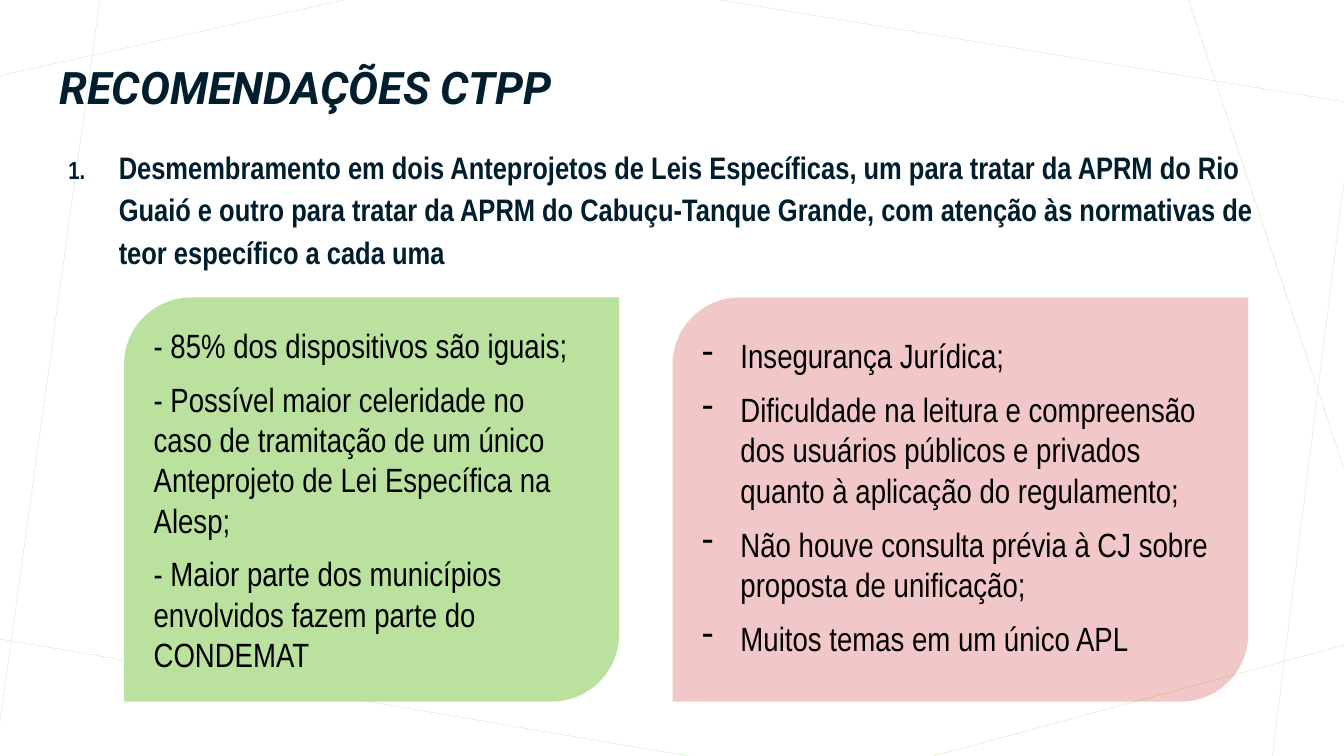
from lxml import etree
from pptx import Presentation
from pptx import util as u
from pptx.dml.color import RGBColor
from pptx.enum import shapes, text
from pptx.oxml.ns import qn

PX = u.Inches(1) // 100
NAVY, GREEN, RED, BLACK = "001E2E", "BAE19E", "C00000", "000000"
BODY, HEAD = "Arial Narrow", "Roboto"


def color(code):
    return RGBColor.from_string(code)


def fade(fill, pct):
    """Make a solid fill partly transparent; pct is its opacity."""
    tone = fill._xPr.find(qn("a:solidFill"))[0]
    etree.SubElement(tone, qn("a:alpha"), val=str(pct * 1000))


def bullet(para, indent, tag, **attrs):
    """Hang a bullet or number in front of the paragraph."""
    props = para._p.get_or_add_pPr()
    props.set("marL", str(indent * PX))
    props.set("indent", str(-indent * PX))
    if tag == "a:buAutoNum":
        etree.SubElement(props, qn("a:buSzPct"), val="80000")
    etree.SubElement(props, qn(tag), **attrs)


class Deck:
    def __init__(self, wide, high):
        self.prs = Presentation()
        self.prs.slide_width = wide * PX
        self.prs.slide_height = high * PX
        self.slide = self.prs.slides.add_slide(self.prs.slide_layouts[5])
        self.items = self.slide.shapes

    def label(self, frame, lines, size, tone, font=BODY, bold=False,
              italic=False, gap=0, pitch=None):
        frame.word_wrap = True
        frame.text = "\n".join(lines)
        for i, para in enumerate(frame.paragraphs):
            para.alignment = text.PP_ALIGN.LEFT
            if pitch:
                para.line_spacing = pitch
            if i and gap:
                para.space_before = u.Pt(gap)
            for run in para.runs:
                run.font.size = u.Pt(size)
                run.font.name = font
                run.font.bold = bold
                run.font.italic = italic
                run.font.color.rgb = color(tone)
        return frame.paragraphs

    def title(self, box, words):
        head = self.items.title
        head.left, head.top, head.width, head.height = (n * PX for n in box)
        head.text_frame.vertical_anchor = text.MSO_ANCHOR.MIDDLE
        self.label(head.text_frame, [words], 32, NAVY, HEAD, True, True, pitch=0.9)

    def line(self, *ends):
        link = self.items.add_connector(
            shapes.MSO_CONNECTOR.STRAIGHT, *(n * PX for n in ends))
        link.line.color.rgb = color(GREEN)
        link.line.width = u.Pt(0.25)
        fade(link.line.fill, 70)
        etree.SubElement(link._element.spPr, qn("a:effectLst"))

    def point(self, box, words):
        """Add the numbered recommendation."""
        area = self.items.add_textbox(*(n * PX for n in box))
        for para in self.label(area.text_frame, [words], 22.2, NAVY,
                               bold=True, pitch=1.14):
            bullet(para, 50, "a:buAutoNum", type="arabicPeriod")

    def card(self, box, lines, fill, opacity=100, dashes=False):
        form = self.items.add_shape(
            shapes.MSO_SHAPE.ROUND_2_DIAG_RECTANGLE, *(n * PX for n in box))
        form.shadow.inherit = False
        form.fill.solid()
        form.fill.fore_color.rgb = color(fill)
        if opacity < 100:
            fade(form.fill, opacity)
        form.line.fill.background()
        frame = form.text_frame
        frame.vertical_anchor = text.MSO_ANCHOR.MIDDLE
        paras = self.label(frame, lines, 24, BLACK, gap=9.6)
        if dashes:
            frame.vertical_anchor = text.MSO_ANCHOR.TOP
            frame.margin_top = 18 * PX
            for para in paras:
                bullet(para, 38, "a:buChar", char="-")


def main():
    deck = Deck(1333, 750)
    for ends in (
        (341, 0, 0, 75), (99, 0, 0, 716), (683, 750, 0, 634),
        (1333, 640, 926, 750), (1333, 180, 1262, 750),
        (1333, 466, 1179, 0), (1333, 101, 714, 0),
    ):
        deck.line(*ends)
    deck.title((49, 14, 1083, 151), "RECOMENDAÇÕES CTPP")
    deck.point(
        (58, 137, 1217, 136),
        "Desmembramento em dois Anteprojetos de Leis Específicas, um para "
        "tratar da APRM do Rio Guaió e outro para tratar da APRM do "
        "Cabuçu-Tanque Grande, com atenção às normativas de teor específico "
        "a cada uma")
    deck.card((123, 295, 491, 401), [
        "- 85% dos dispositivos são iguais;",
        "- Possível maior celeridade no caso de tramitação de um único "
        "Anteprojeto de Lei Específica na Alesp;",
        "- Maior parte dos municípios envolvidos fazem parte do CONDEMAT",
    ], GREEN)
    deck.card((667, 295, 571, 401), [
        "Insegurança Jurídica;",
        "Dificuldade na leitura e compreensão dos usuários públicos e "
        "privados quanto à aplicação do regulamento;",
        "Não houve consulta prévia à CJ sobre proposta de unificação;",
        "Muitos temas em um único APL",
    ], RED, 22, dashes=True)
    deck.prs.save("out.pptx")


if __name__ == "__main__":
    main()
